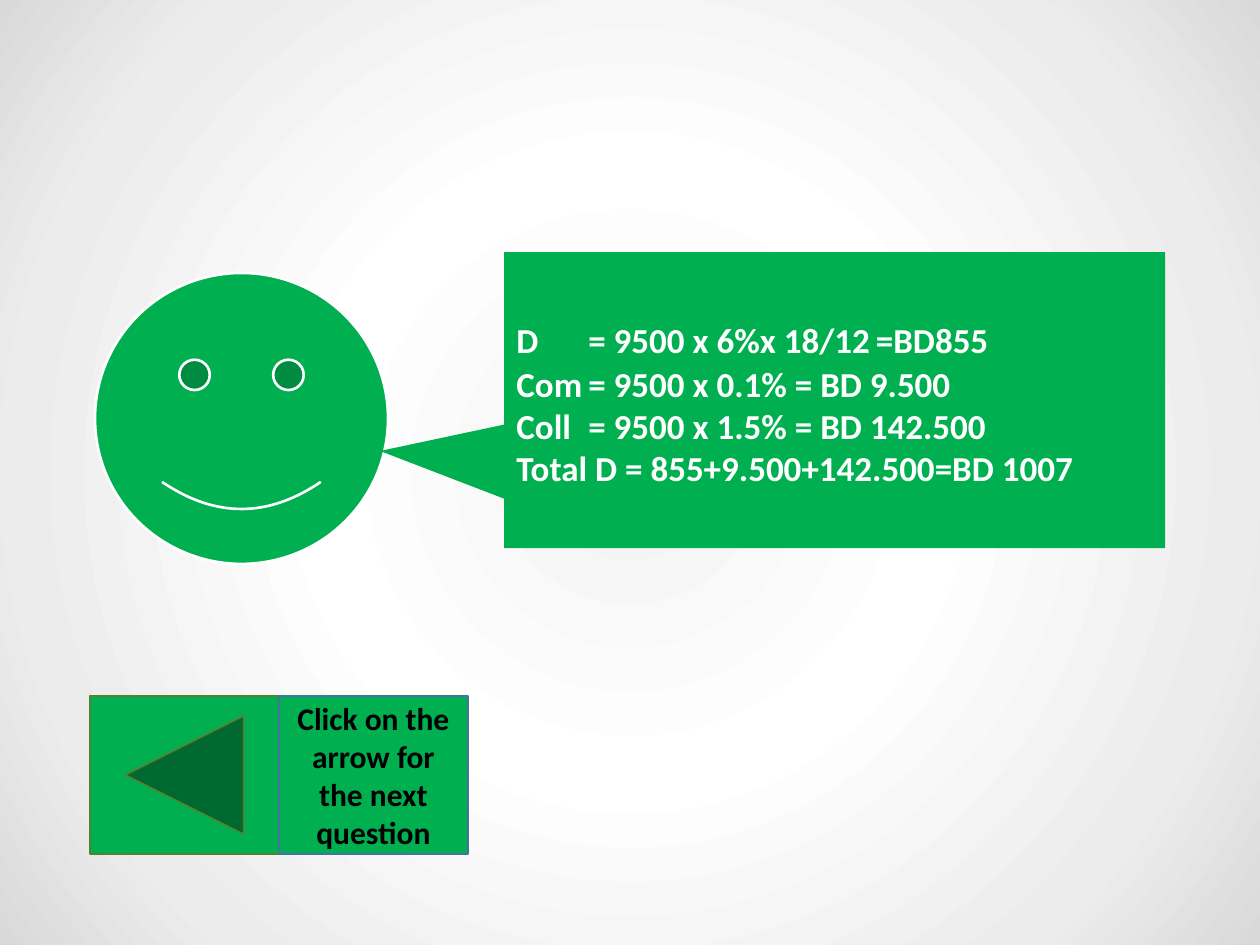
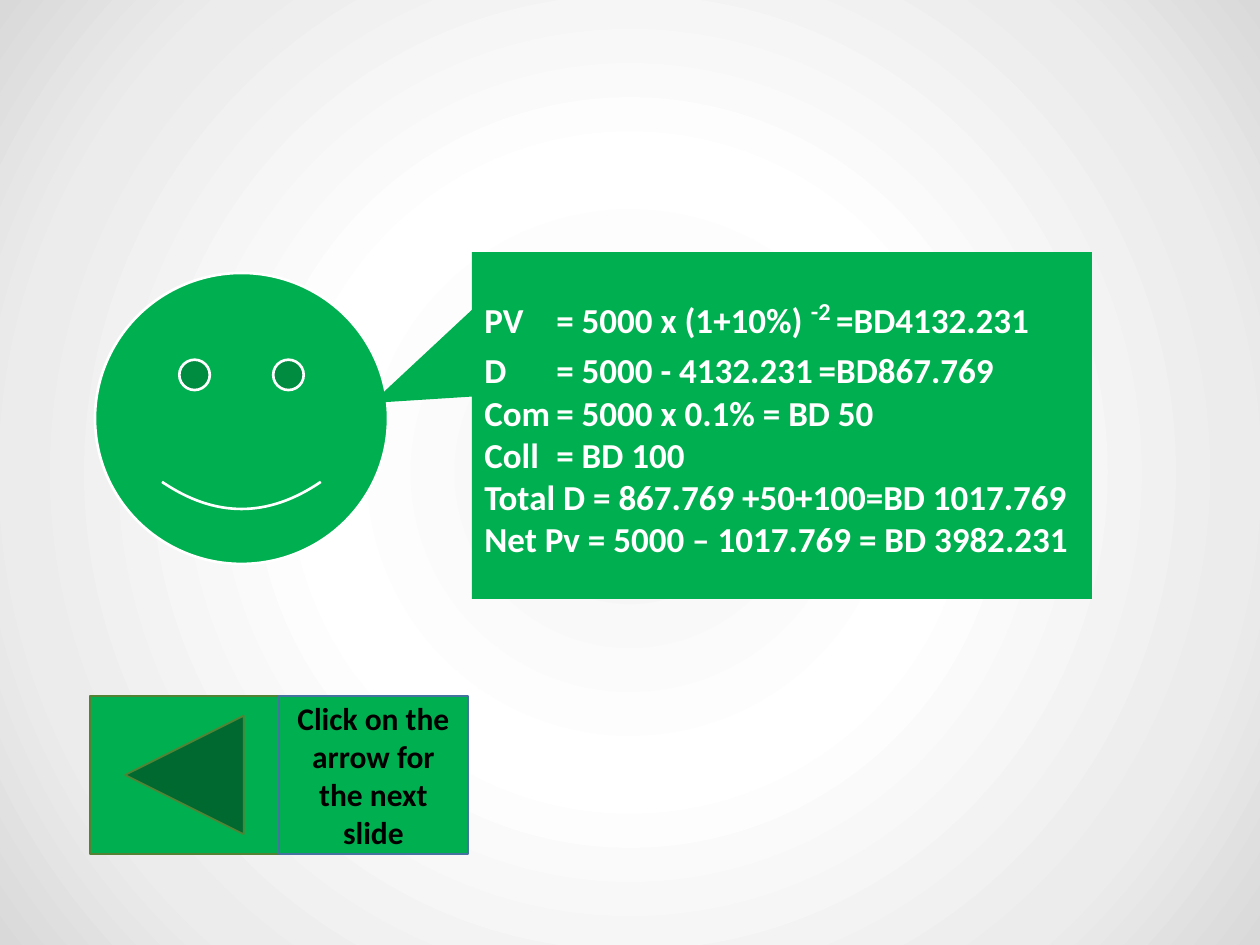
"""Build two answer slides: a smiley speaking a worked solution, and a button to move on."""
from dataclasses import dataclass

from pptx import Presentation
from pptx import util as u
from pptx.dml.color import RGBColor
from pptx.enum import shapes, text
from pptx.oxml import parse_xml
from pptx.oxml.ns import nsdecls, qn

ANSWERS = [
    {
        "box": (504, 252, 661, 296),
        "tip": (380, 451),
        "lines": [
            "D\t= 9500 x 6%x 18/12^ ^=BD855",
            "Com\t= 9500 x 0.1% = BD 9.500",
            "Coll\t= 9500 x 1.5% = BD 142.500",
            "Total D = 855+9.500+142.500=BD 1007",
        ],
        "prompt": "Click on the arrow for the next question",
    },
    {
        "box": (472, 252, 620, 347),
        "tip": (372, 403),
        "lines": [
            "PV\t= 5000 x (1+10%) ^-2 ^=BD4132.231",
            "D\t= 5000 - 4132.231^ ^=BD867.769",
            "Com\t= 5000 x 0.1% = BD 50",
            "Coll\t= BD 100",
            "Total D = 867.769 +50+100=BD 1017.769",
            "Net Pv = 5000 – 1017.769 = BD 3982.231",
        ],
        "prompt": "Click on the arrow for the next slide",
    },
]

SLIDE_SIZE = (1260, 945)
SMILEY_BOX = (95, 273, 293, 291)
BUTTON_BOX = (90, 696, 189, 158)
EQUALS_TAB = 72


@dataclass(frozen=True)
class Theme:
    font: str = "Calibri"
    green: str = "00B050"
    white: str = "FFFFFF"
    black: str = "000000"
    button_line: str = "548235"
    prompt_line: str = "43739E"
    backdrop: tuple = ((0, "F2F2F2"), (39, "FFFFFF"), (78, "ECECEC"), (100, "D9D9D9"))
    answer_size: int = 20
    power_size: int = 24
    prompt_size: int = 18


THEME = Theme()


def px(length):
    """Turn pixels into EMU."""
    return u.Emu(round(length * 914400 / 126))


def paint_backdrop(master):
    """Give every slide the same round gradient."""
    master.background.fill.gradient()
    stops = "".join(
        f'<a:gs pos="{place * 1000}"><a:srgbClr val="{colour}"/></a:gs>'
        for place, colour in THEME.backdrop
    )
    gradient = master.element.find(".//" + qn("a:gradFill"))
    gradient.getparent().replace(gradient, parse_xml(
        f'<a:gradFill {nsdecls("a")} rotWithShape="1"><a:gsLst>{stops}</a:gsLst>'
        '<a:path path="circle"><a:fillToRect l="50000" t="50000" r="50000" b="50000"/>'
        '</a:path></a:gradFill>'
    ))


def add_green_shape(slide, kind, box, line=None, width=1):
    """Add a flat green shape, outlined only when a line colour is given."""
    shape = slide.shapes.add_shape(kind, *map(px, box))
    shape.shadow.inherit = False
    shape.fill.solid()
    shape.fill.fore_color.rgb = RGBColor.from_string(THEME.green)
    if line:
        shape.line.color.rgb = RGBColor.from_string(line)
        shape.line.width = u.Pt(width)
    else:
        shape.line.fill.background()
    return shape


def style_run(run, size, colour):
    """Apply the shared bold type."""
    run.font.name = THEME.font
    run.font.bold = True
    run.font.size = u.Pt(size)
    run.font.color.rgb = RGBColor.from_string(colour)


def write_line(paragraph, line):
    """Write one answer line; parts between carets are raised."""
    paragraph.alignment = text.PP_ALIGN.LEFT
    paragraph._p.get_or_add_pPr().append(parse_xml(
        f'<a:tabLst {nsdecls("a")}><a:tab pos="{px(EQUALS_TAB)}" algn="l"/></a:tabLst>'
    ))
    for index, part in enumerate(line.split("^")):
        raised = index % 2 == 1
        run = paragraph.add_run()
        run.text = part
        style_run(run, THEME.power_size if raised else THEME.answer_size, THEME.white)
        if raised:
            run.font._element.set("baseline", "30000")


def add_answer(slide, box, tip, lines):
    """Add the speech box whose pointer ends at the tip."""
    left, top, width, height = box
    callout = add_green_shape(slide, shapes.MSO_SHAPE.RECTANGULAR_CALLOUT, box)
    callout.adjustments[0] = (tip[0] - left) / width - 0.5
    callout.adjustments[1] = (tip[1] - top) / height - 0.5
    frame = callout.text_frame
    frame.vertical_anchor = text.MSO_ANCHOR.MIDDLE
    frame.text = "\n".join("" for _ in lines)
    for paragraph, line in zip(frame.paragraphs, lines):
        write_line(paragraph, line)


def add_prompt(slide, prompt):
    """Add the label that sits against the right edge of the button."""
    left, top, width, height = BUTTON_BOX
    label = add_green_shape(slide, shapes.MSO_SHAPE.PENTAGON,
                            (left + width, top, width, height), THEME.prompt_line)
    label.adjustments[0] = 0
    frame = label.text_frame
    frame.vertical_anchor = text.MSO_ANCHOR.MIDDLE
    frame.text = prompt
    paragraph = frame.paragraphs[0]
    paragraph.alignment = text.PP_ALIGN.CENTER
    style_run(paragraph.runs[0], THEME.prompt_size, THEME.black)


def main():
    """Build and save the slides."""
    presentation = Presentation()
    presentation.slide_width, presentation.slide_height = map(px, SLIDE_SIZE)
    paint_backdrop(presentation.slide_master)
    for answer in ANSWERS:
        slide = presentation.slides.add_slide(presentation.slide_layouts[6])
        add_green_shape(slide, shapes.MSO_SHAPE.SMILEY_FACE, SMILEY_BOX, THEME.white, 1.5)
        add_green_shape(slide, shapes.MSO_SHAPE.ACTION_BUTTON_BACK_OR_PREVIOUS,
                        BUTTON_BOX, THEME.button_line)
        add_answer(slide, answer["box"], answer["tip"], answer["lines"])
        add_prompt(slide, answer["prompt"])
    presentation.save("out.pptx")


if __name__ == "__main__":
    main()
